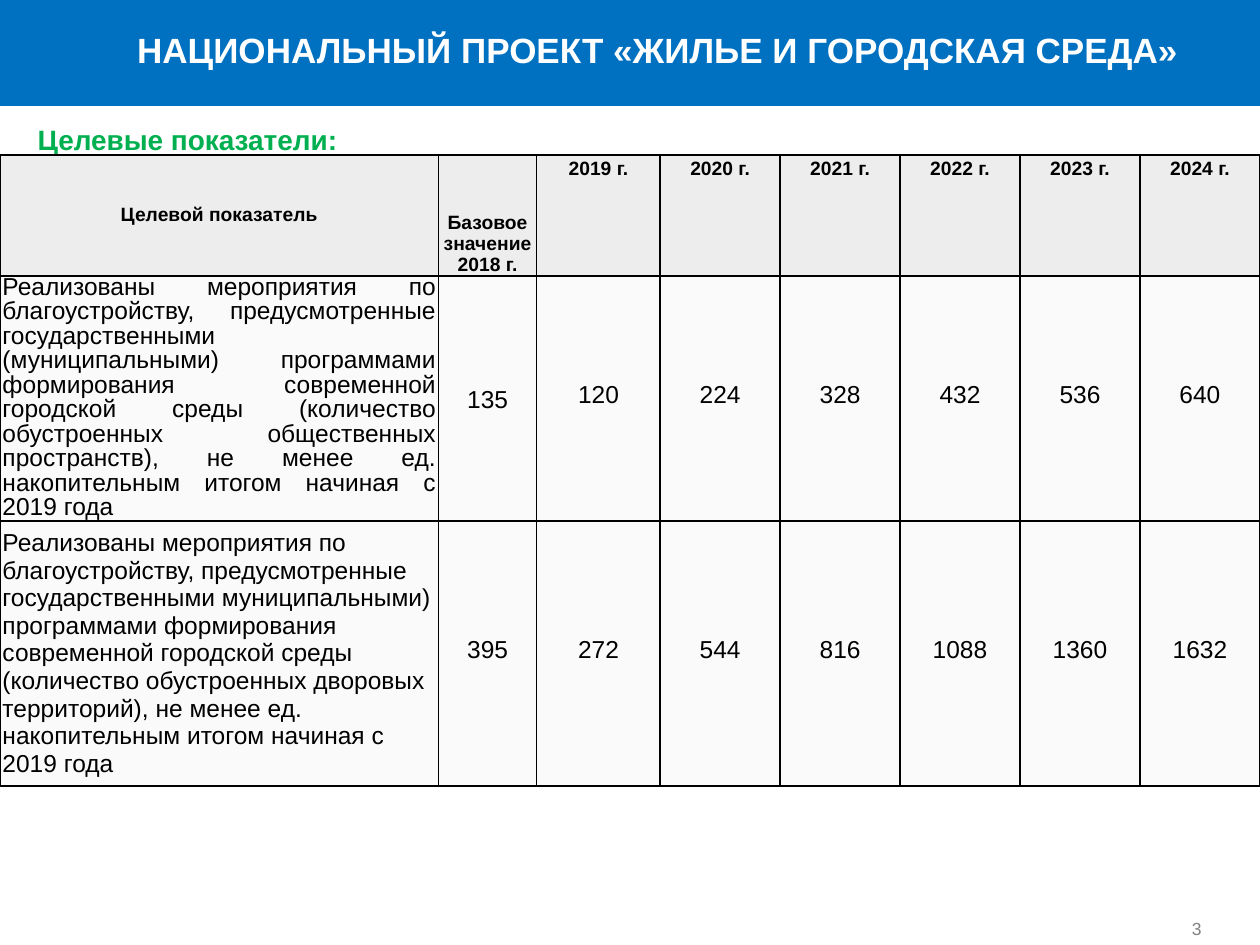
import pptx
import pptx.util
import pptx.dml.color
import pptx.enum.shapes
import pptx.enum.text
import pptx.oxml

Inches = pptx.util.Inches
Pt = pptx.util.Pt
Align = pptx.enum.text.PP_ALIGN
Anchor = pptx.enum.text.MSO_ANCHOR
NS = 'xmlns:a="http://schemas.openxmlformats.org/drawingml/2006/main"'

COLUMN_WIDTHS = [3.48, 0.78, 0.98] + [0.952] * 5
ROW_HEIGHTS = [0.96, 1.94, 2.1]
HEADINGS = ["Целевой показатель", "Базовое значение 2018 г."] + [
    f"{year} г." for year in range(2019, 2025)
]
INDICATORS = [
    [
        "Реализованы мероприятия по благоустройству, предусмотренные государственными "
        "(муниципальными) программами формирования современной городской среды "
        "(количество обустроенных общественных пространств), не менее ед. "
        "накопительным итогом начиная с 2019 года",
        135, 120, 224, 328, 432, 536, 640,
    ],
    [
        "Реализованы мероприятия по благоустройству, предусмотренные государственными "
        "муниципальными) программами формирования современной городской среды "
        "(количество обустроенных дворовых территорий), не менее ед. "
        "накопительным итогом начиная с 2019 года",
        395, 272, 544, 816, 1088, 1360, 1632,
    ],
]


def color(value):
    return pptx.dml.color.RGBColor.from_string(value)


def write_text(frame, text, size=14, fill="000000", bold=False, align=Align.LEFT,
               spacing=None, after=None):
    para = frame.paragraphs[0]
    para.alignment = align
    if spacing is not None:
        para.line_spacing = spacing
    if after is not None:
        para.space_after = after
    span = para.add_run()
    span.text = text
    span.font.name = "Arial"
    span.font.size = Pt(size)
    span.font.bold = bold
    span.font.color.rgb = color(fill)


def add_label(page, box, text, inset=0.05, wrap=False, anchor=Anchor.TOP, **style):
    frame = page.shapes.add_textbox(*[Inches(length) for length in box]).text_frame
    frame.word_wrap = wrap
    frame.vertical_anchor = anchor
    if inset is not None:
        frame.margin_left = frame.margin_right = Inches(inset)
        frame.margin_top = frame.margin_bottom = Inches(inset)
    write_text(frame, text, **style)


def add_banner(page, box):
    left, top, width, height = box
    band = page.shapes.add_shape(
        pptx.enum.shapes.MSO_SHAPE.RECTANGLE, *[Inches(length) for length in box]
    )
    band.shadow.inherit = False
    band.fill.solid()
    band.fill.fore_color.rgb = color("0070C1")
    band.line.fill.background()
    add_label(page, (left + 1, top + 0.18, width - 1.56, 0.44),
              "НАЦИОНАЛЬНЫЙ ПРОЕКТ «ЖИЛЬЕ И ГОРОДСКАЯ СРЕДА»",
              size=20, fill="FFFFFF", bold=True, align=Align.CENTER)


def style_cell(cell, fill, inset, anchor, opacity=None):
    cell.margin_left = cell.margin_right = Inches(inset)
    cell.margin_top = cell.margin_bottom = 0
    cell.vertical_anchor = anchor
    cell.fill.solid()
    cell.fill.fore_color.rgb = color(fill)
    properties = cell._tc.get_or_add_tcPr()
    if opacity is not None:
        tint = properties.find(".//{*}srgbClr")
        tint.append(pptx.oxml.parse_xml(f'<a:alpha {NS} val="{opacity * 1000}"/>'))
    for index, side in enumerate(("lnL", "lnR", "lnT", "lnB")):
        properties.insert(index, pptx.oxml.parse_xml(
            f'<a:{side} {NS} w="12700"><a:solidFill><a:srgbClr val="000000"/>'
            f'</a:solidFill></a:{side}>'
        ))


def fill_heading(cell, column, text):
    anchor = {0: Anchor.MIDDLE, 1: Anchor.BOTTOM}.get(column, Anchor.TOP)
    style_cell(cell, "EDEDED", 0.01, anchor)
    write_text(cell.text_frame, text, size=11, bold=True, align=Align.CENTER,
               spacing=Pt(12) if column < 2 else 1.15)


def fill_indicator(cell, row, column, value):
    first_base = (row, column) == (1, 1)
    style_cell(cell, "F2F2F2", 0.07 if first_base else 0.02, Anchor.MIDDLE, opacity=36)
    if first_base:
        style = dict(align=Align.CENTER, spacing=Pt(18), after=Pt(6))
    elif column:
        style = dict(align=Align.CENTER, spacing=Pt(12))
    elif row == 1:
        style = dict(align=Align.JUSTIFY, spacing=Pt(14))
    else:
        style = {}
    write_text(cell.text_frame, str(value), **style)


def add_indicator_table(page, box):
    table = page.shapes.add_table(
        len(ROW_HEIGHTS), len(COLUMN_WIDTHS), *[Inches(length) for length in box]
    ).table
    table.horz_banding = False
    for column, width in zip(table.columns, COLUMN_WIDTHS):
        column.width = Inches(width)
    for row, height in zip(table.rows, ROW_HEIGHTS):
        row.height = Inches(height)
    for column, text in enumerate(HEADINGS):
        fill_heading(table.cell(0, column), column, text)
    for row, values in enumerate(INDICATORS, 1):
        for column, value in enumerate(values):
            fill_indicator(table.cell(row, column), row, column, value)


def main():
    deck = pptx.Presentation()
    deck.slide_width = Inches(10)
    deck.slide_height = Inches(7.5)
    page = deck.slides.add_slide(deck.slide_layouts[6])
    add_banner(page, (0, 0, 10, 0.84))
    add_label(page, (9.41, 7.1, 0.56, 0.4), "3", anchor=Anchor.BOTTOM,
              size=10, fill="808080")
    add_label(page, (0.2, 0.92, 3.62, 0.37), "Целевые показатели:", inset=None,
              wrap=True, size=16, fill="00B050", bold=True)
    add_indicator_table(page, (0, 1.23, 10, sum(ROW_HEIGHTS)))
    deck.save("out.pptx")


if __name__ == "__main__":
    main()
